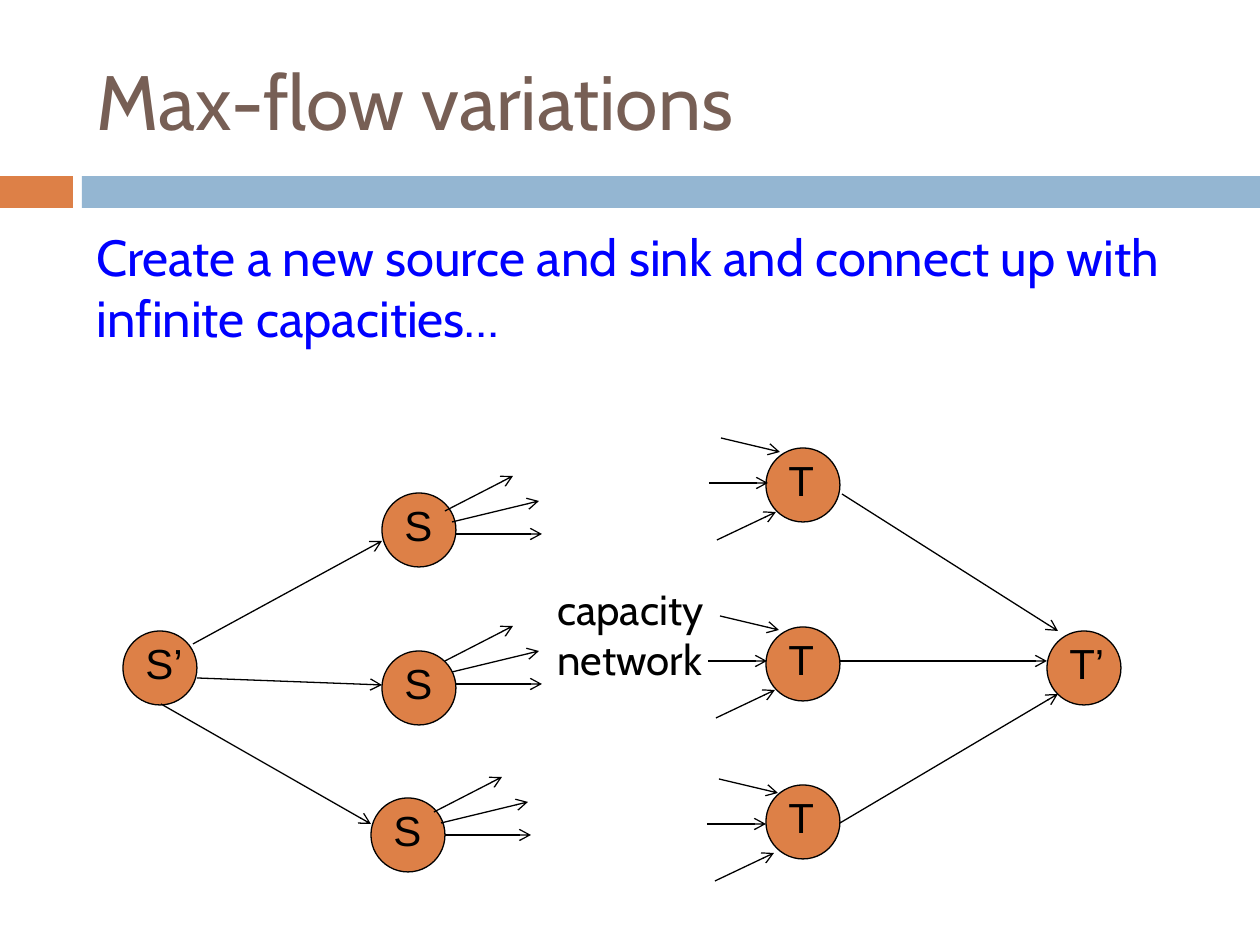
import pptx
import pptx.dml.color
import pptx.enum.shapes
import pptx.enum.text
import pptx.oxml.ns
import pptx.util
from lxml import etree

PX = 914400 // 126
COLORS = {
    "title": "775F55",
    "body": "0000FF",
    "ink": "000000",
    "orange": "DD8047",
    "blue": "94B6D2",
}
FORMATS = {
    "title": {"name": "Cabin", "size": pptx.util.Pt(44)},
    "body": {"name": "Cabin", "size": pptx.util.Pt(29)},
    "caption": {"name": "Cabin", "size": pptx.util.Pt(24)},
    "node": {"name": "Arial", "size": pptx.util.Pt(24)},
}
SHAPES = pptx.enum.shapes.MSO_SHAPE
ANCHORS = pptx.enum.text.MSO_ANCHOR
NODE_SIZE = 74


def px(*lengths):
    return [length * PX for length in lengths]


def rgb(color):
    return pptx.dml.color.RGBColor.from_string(COLORS[color])


class SlideBuilder:
    def __init__(self, slide):
        self.slide = slide

    def shape(self, kind, box, fill, line=None, parent=None):
        shapes = (parent or self.slide).shapes
        shape = shapes.add_shape(kind, *px(*box))
        shape.shadow.inherit = False
        shape.fill.solid()
        shape.fill.fore_color.rgb = rgb(fill)
        if line:
            shape.line.color.rgb = rgb(line)
            shape.line.width = pptx.util.Pt(0.75)
        else:
            shape.line.fill.background()

    def text(self, words, box, style, color, anchor=ANCHORS.TOP, before=0, parent=None):
        shapes = (parent or self.slide).shapes
        frame = shapes.add_textbox(*px(*box)).text_frame
        frame.word_wrap = True
        frame.vertical_anchor = anchor
        paragraph = frame.paragraphs[0]
        paragraph.space_before = pptx.util.Pt(before)
        run = paragraph.add_run()
        run.text = words
        for name, value in FORMATS[style].items():
            setattr(run.font, name, value)
        run.font.color.rgb = rgb(color)

    def node(self, label, left, top):
        group = self.slide.shapes.add_group_shape()
        self.shape(SHAPES.OVAL, (left, top, NODE_SIZE, NODE_SIZE), "orange", "ink", group)
        self.text(label, (left + 10, top, 64, 63), "node", "ink", parent=group)

    def arrow(self, x1, y1, x2, y2):
        straight = pptx.enum.shapes.MSO_CONNECTOR.STRAIGHT
        arrow = self.slide.shapes.add_connector(straight, *px(x1, y1, x2, y2))
        arrow.line.color.rgb = rgb("ink")
        arrow.line.width = pptx.util.Pt(0.75)
        qn = pptx.oxml.ns.qn
        etree.SubElement(arrow.line._get_or_add_ln(), qn("a:tailEnd"), type="arrow")
        etree.SubElement(arrow._element.spPr, qn("a:effectLst"))

    def fan(self, x, y, rays):
        for x1, y1, x2, y2 in rays:
            self.arrow(x + x1, y + y1, x + x2, y + y2)


def main():
    deck = pptx.Presentation()
    deck.slide_width, deck.slide_height = px(1260, 945)
    builder = SlideBuilder(deck.slides.add_slide(deck.slide_layouts[6]))

    builder.shape(SHAPES.RECTANGLE, (0, 176, 73, 32), "orange")
    builder.shape(SHAPES.RECTANGLE, (82, 176, 1178, 32), "blue")
    builder.text("Max-flow variations", (84, 32, 1124, 136), "title", "title", ANCHORS.MIDDLE)
    builder.text(
        "Create a new source and sink and connect up with infinite capacities…",
        (84, 220, 1124, 174), "body", "body", before=7,
    )

    nodes = {
        "S": [(382, 493), (382, 651), (371, 798)],
        "T": [(766, 448), (766, 627), (766, 785)],
        "S’": [(123, 631)],
        "T’": [(1047, 631)],
    }
    for label, places in nodes.items():
        for left, top in places:
            builder.node(label, left, top)

    outgoing = [(0, 0, 68, -35), (7, 11, 94, -10), (11, 23, 97, 23)]
    for x, y in [(445, 511), (445, 661), (434, 812)]:
        builder.fan(x, y, outgoing)

    incoming = [(12, -45, 71, -31), (0, 0, 59, 0), (8, 57, 67, 29)]
    for x, y in [(709, 483), (708, 661), (707, 824)]:
        builder.fan(x, y, incoming)

    builder.text("capacity network", (545, 577, 187, 115), "caption", "ink")

    infinite_edges = [
        (193, 644, 382, 541),
        (197, 678, 382, 685),
        (161, 704, 371, 824),
        (842, 494, 1058, 631),
        (840, 661, 1047, 661),
        (840, 823, 1058, 694),
    ]
    for edge in infinite_edges:
        builder.arrow(*edge)

    deck.save("out.pptx")


if __name__ == "__main__":
    main()
